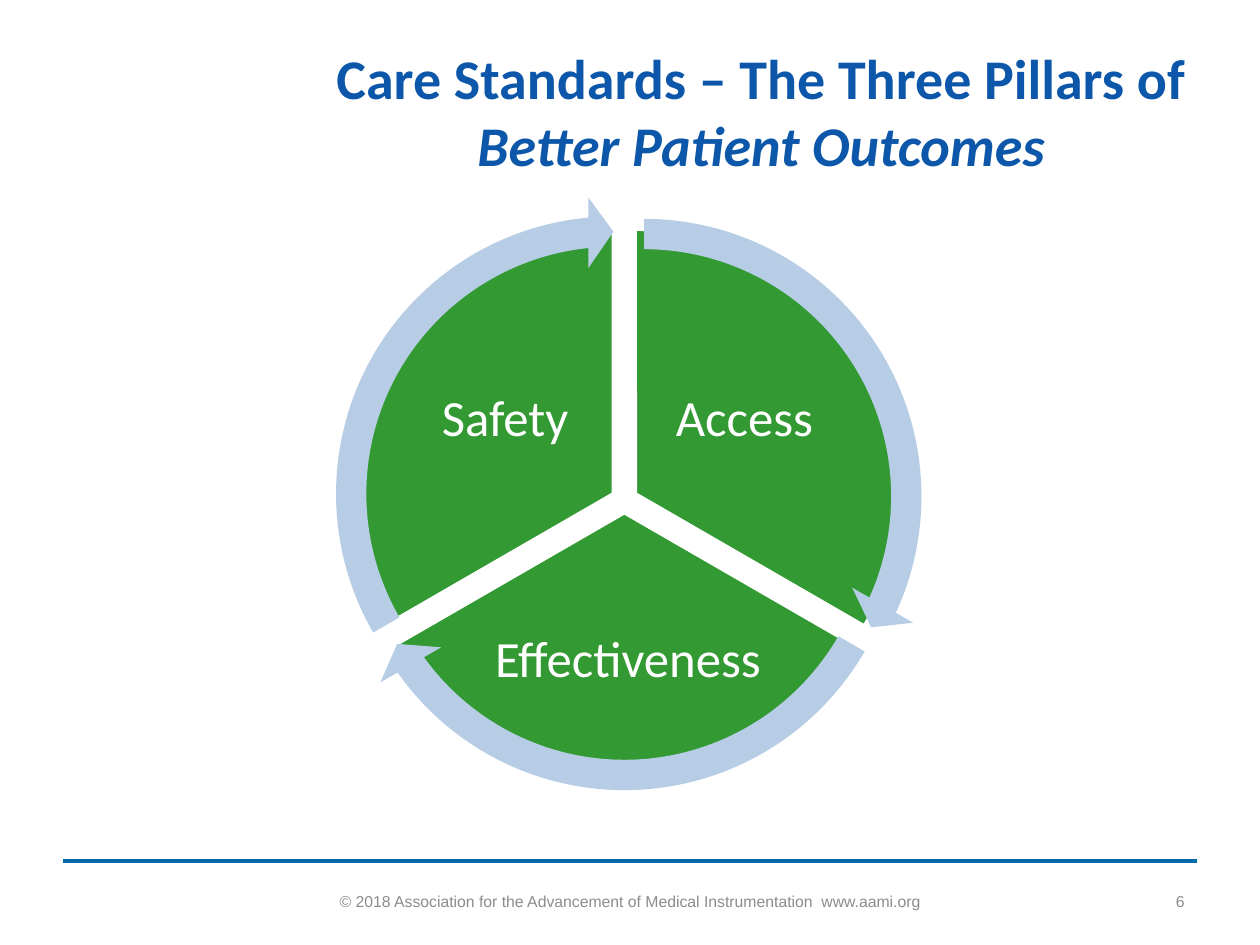
from dataclasses import dataclass
from math import cos, radians, sin

from pptx import Presentation
from pptx.dml.color import RGBColor
from pptx.enum.shapes import MSO_CONNECTOR, MSO_SHAPE
from pptx.enum.text import MSO_ANCHOR, PP_ALIGN
from pptx.oxml.ns import qn
from pptx.util import Pt

BLUE, GREEN, PALE_BLUE = "0C57A9", "339933", "B7CCE5"
RULE_BLUE, GREY, WHITE = "0069AA", "8C8C8C", "FFFFFF"
SWEEP = 120


@dataclass
class Sector:
    """Offsets, in points, run from the middle of the cycle."""
    name: str
    start: int
    label_offset: tuple
    label_size: tuple
    arrow_shift: tuple = (0, 0)


SECTORS = [
    Sector("Access", 270, (68.7, -45.7), (108, 90), (5, 1.4)),
    Sector("Effectiveness", 30, (2.1, 92.2), (162, 79.2)),
    Sector("Safety", 150, (-68.1, -45.7), (108, 90)),
]


def color(value):
    return RGBColor.from_string(value)


def format_runs(paragraph, font_name, size, hex_color):
    for run in paragraph.runs:
        run.font.name = font_name
        run.font.size = Pt(size)
        run.font.color.rgb = color(hex_color)


def add_label(shapes, box, text, font_name, size, hex_color,
              align=PP_ALIGN.CENTER):
    shape = shapes.add_textbox(*(Pt(value) for value in box))
    frame = shape.text_frame
    frame.word_wrap = True
    frame.vertical_anchor = MSO_ANCHOR.MIDDLE
    frame.text = text
    paragraph = frame.paragraphs[0]
    paragraph.alignment = align
    format_runs(paragraph, font_name, size, hex_color)
    return shape


def add_round_shape(shapes, kind, center, diameter, fill, adjustments):
    left, top = (value - diameter / 2 for value in center)
    shape = shapes.add_shape(kind, Pt(left), Pt(top), Pt(diameter), Pt(diameter))
    shape.shadow.inherit = False
    shape.fill.solid()
    shape.fill.fore_color.rgb = color(fill)
    for index, value in enumerate(adjustments):
        shape.adjustments[index] = value
    return shape


def angle(degrees):
    """Degrees as an adjustment value: 60000ths of a degree over 100000."""
    return degrees % 360 * 0.6


def add_title(slide, box):
    title = slide.shapes.title
    title.left, title.top, title.width, title.height = (Pt(v) for v in box)
    frame = title.text_frame
    frame.vertical_anchor = MSO_ANCHOR.MIDDLE
    paragraph = frame.paragraphs[0]
    paragraph.alignment = PP_ALIGN.CENTER
    for text, italic in [("Care Standards – The Three Pillars of ", False),
                         ("Better Patient Outcomes", True)]:
        run = paragraph.add_run()
        run.text = text
        run.font.bold = True
        run.font.italic = italic
    format_runs(paragraph, "Calibri", 32, BLUE)


def add_cycle(slide, box):
    """Three pie sectors pushed apart, with an arrow around each."""
    left, top, width, height = box
    middle = (left + width / 2, top + height / 2)
    pie_size, arrow_size, gap = 302.4, 339.8, 7.2
    shapes = slide.shapes.add_group_shape().shapes

    centers = []
    for sector in SECTORS:
        bisector = radians(sector.start + SWEEP / 2)
        center = (middle[0] + gap * cos(bisector),
                  middle[1] + gap * sin(bisector))
        centers.append(center)
        pie = add_round_shape(
            shapes, MSO_SHAPE.PIE, center, pie_size, GREEN,
            [angle(sector.start), angle(sector.start + SWEEP)])
        pie.line.color.rgb = color(WHITE)
        pie.line.width = Pt(2)

        label_width, label_height = sector.label_size
        label_box = (middle[0] + sector.label_offset[0] - label_width / 2,
                     middle[1] + sector.label_offset[1] - label_height / 2,
                     label_width, label_height)
        label = add_label(shapes, label_box, sector.name, "Calibri", 29, WHITE)
        frame = label.text_frame
        frame.margin_left = frame.margin_right = Pt(2.9)
        frame.margin_top = frame.margin_bottom = Pt(2.9)
        frame.paragraphs[0].line_spacing = 0.9

    for sector, center in zip(SECTORS, centers):
        arrow_center = [a + b for a, b in zip(center, sector.arrow_shift)]
        arrow = add_round_shape(
            shapes, MSO_SHAPE.CIRCULAR_ARROW, arrow_center, arrow_size, PALE_BLUE,
            [0.051, angle(5.46), angle(sector.start + SWEEP - 5.46),
             angle(sector.start), 0.059])
        arrow.line.fill.background()


def add_footer(slide, box):
    left, top, width, height = box
    rule = slide.shapes.add_connector(
        MSO_CONNECTOR.STRAIGHT, Pt(left), Pt(top), Pt(left + width), Pt(top))
    rule.line.color.rgb = color(RULE_BLUE)
    rule.line.width = Pt(2.25)
    properties = rule._element.spPr
    properties.append(properties.makeelement(qn("a:effectLst"), {}))

    text_height = 28.8
    text_top = top + height - text_height
    notice_width, number_width = 360, 132
    add_label(slide.shapes,
              (left + (width - notice_width) / 2, text_top,
               notice_width, text_height),
              "© 2018 Association for the Advancement of Medical "
              "Instrumentation  www.aami.org", "Arial", 9, GREY)
    add_label(slide.shapes,
              (left + width - number_width, text_top, number_width, text_height),
              "6", "Arial", 9, GREY, PP_ALIGN.RIGHT)


def main():
    presentation = Presentation()
    presentation.slide_width, presentation.slide_height = Pt(720), Pt(540)
    slide = presentation.slides.add_slide(presentation.slide_layouts[5])
    add_title(slide, (168, 18, 534, 90))
    add_cycle(slide, (186.8, 115.8, 340, 340))
    add_footer(slide, (36, 491.8, 648, 37.4))
    presentation.save("out.pptx")


if __name__ == "__main__":
    main()
